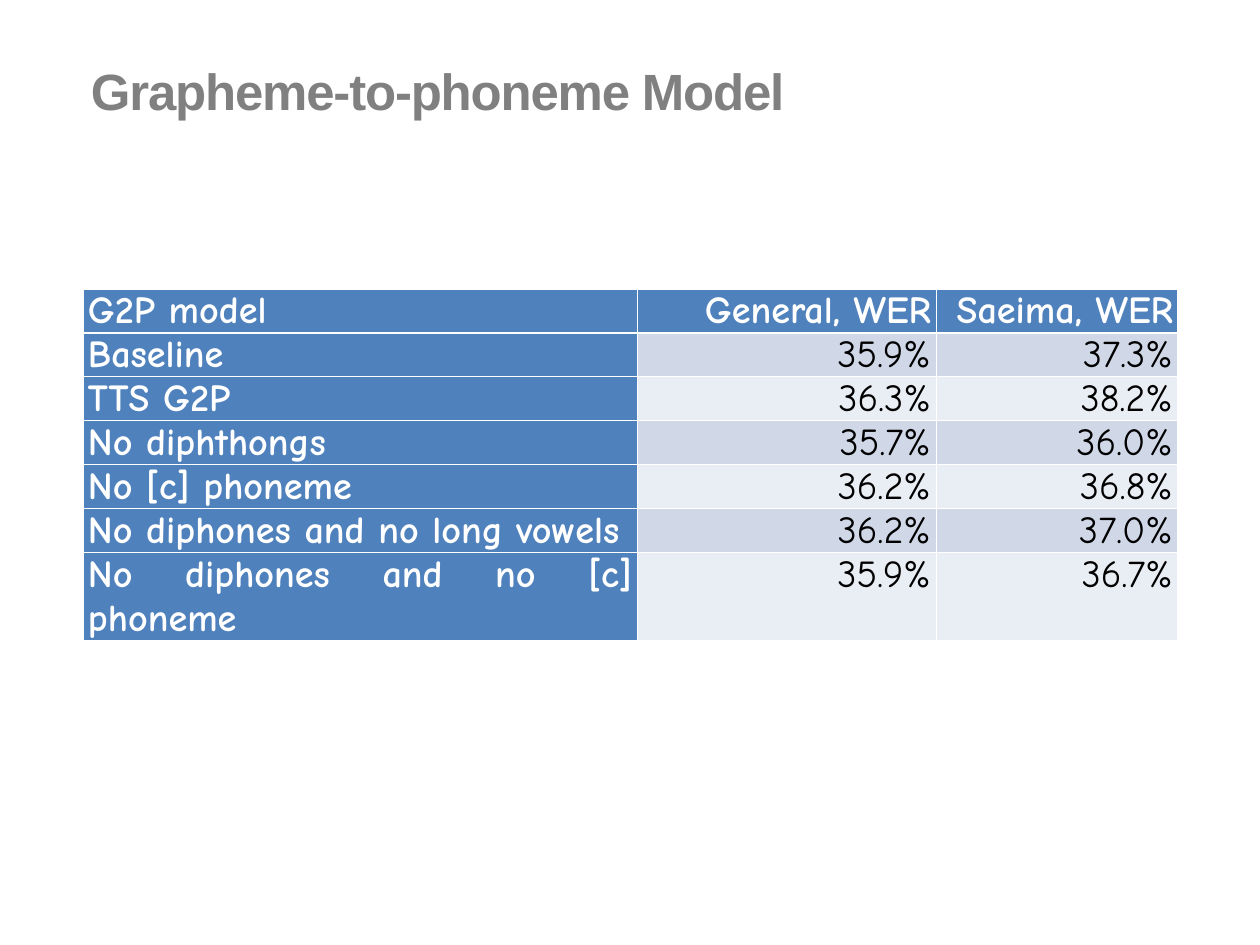
"""Build a slide with a table of word error rates per grapheme-to-phoneme model."""
from dataclasses import dataclass

from lxml.etree import SubElement
from pptx import Presentation
from pptx.dml.color import RGBColor
from pptx.enum.text import MSO_ANCHOR, MSO_AUTO_SIZE, PP_ALIGN
from pptx.oxml.ns import qn
from pptx.util import Pt

EMU_PER_PX = 914400 / 76.4


def px(length):
    return round(length * EMU_PER_PX)


@dataclass(frozen=True)
class Theme:
    title_font: str = "Arial"
    table_font: str = "Comic Neue"
    title_size: int = 48
    table_size: int = 36
    title_color: str = "808080"
    heading_color: str = "FFFFFF"
    value_color: str = "000000"
    heading_fill: str = "4F81BD"
    band_fills: tuple = ("E9EDF4", "D0D8E8")
    border_color: str = "FFFFFF"


class SlideBuilder:
    def __init__(self, slide, theme):
        self.slide = slide
        self.theme = theme

    def style(self, paragraph, font_name, size, color, bold, alignment):
        paragraph.alignment = alignment
        font = paragraph.font
        font.name = font_name
        font.size = Pt(size)
        font.bold = bold
        font.color.rgb = RGBColor.from_string(color)

    def title(self, text, left, top, width, height):
        theme = self.theme
        shape = self.slide.shapes.title
        shape.left, shape.top = px(left), px(top)
        shape.width, shape.height = px(width), px(height)
        frame = shape.text_frame
        frame.text = text
        frame.word_wrap = True
        frame.auto_size = MSO_AUTO_SIZE.NONE
        frame.vertical_anchor = MSO_ANCHOR.TOP
        frame.margin_left = frame.margin_top = px(8)
        paragraph = frame.paragraphs[0]
        self.style(paragraph, theme.title_font, theme.title_size,
                   theme.title_color, True, PP_ALIGN.LEFT)
        paragraph.runs[0].font.bold = True
        paragraph._p.pPr.find(qn("a:defRPr")).set("spc", "-110")

    def borders(self, cell, bottom_width):
        properties = cell._tc.get_or_add_tcPr()
        widths = {"a:lnL": 1, "a:lnR": 1, "a:lnT": 1, "a:lnB": bottom_width}
        for side, width in widths.items():
            line = SubElement(properties, qn(side), w=str(Pt(width)))
            fill = SubElement(line, qn("a:solidFill"))
            SubElement(fill, qn("a:srgbClr"), val=self.theme.border_color)

    def cell(self, cell, text, row, column):
        theme = self.theme
        heading = row == 0 or column == 0
        cell.text = text
        cell.margin_left = cell.margin_right = px(5)
        cell.margin_top = cell.margin_bottom = 0
        self.style(cell.text_frame.paragraphs[0], theme.table_font, theme.table_size,
                   theme.heading_color if heading else theme.value_color, heading,
                   PP_ALIGN.RIGHT if column else PP_ALIGN.JUSTIFY)
        self.borders(cell, 1 if row else 3)
        cell.fill.solid()
        fill = theme.heading_fill if heading else theme.band_fills[row % 2]
        cell.fill.fore_color.rgb = RGBColor.from_string(fill)

    def table(self, rows, left, top, column_widths, row_height):
        table = self.slide.shapes.add_table(
            len(rows), len(column_widths), px(left), px(top),
            px(sum(column_widths)), px(row_height * len(rows))).table
        for column, width in zip(table.columns, column_widths):
            column.width = px(width)
        for row, texts in enumerate(rows):
            for column, text in enumerate(texts):
                self.cell(table.cell(row, column), text, row, column)


def main():
    presentation = Presentation()
    presentation.slide_width, presentation.slide_height = px(1260), px(945)
    slide = presentation.slides.add_slide(presentation.slide_layouts[5])
    builder = SlideBuilder(slide, Theme())
    builder.title("Grapheme-to-phoneme Model", 83, 52, 717, 100)
    builder.table([
        ("G2P model", "General, WER", "Saeima, WER"),
        ("Baseline", "35.9%", "37.3%"),
        ("TTS G2P", "36.3%", "38.2%"),
        ("No diphthongs", "35.7%", "36.0%"),
        ("No [c] phoneme", "36.2%", "36.8%"),
        ("No diphones and no long vowels", "36.2%", "37.0%"),
        ("No diphones and no [c] phoneme", "35.9%", "36.7%"),
    ], 83, 289, (554, 299, 242), 38)
    presentation.save("out.pptx")


if __name__ == "__main__":
    main()
